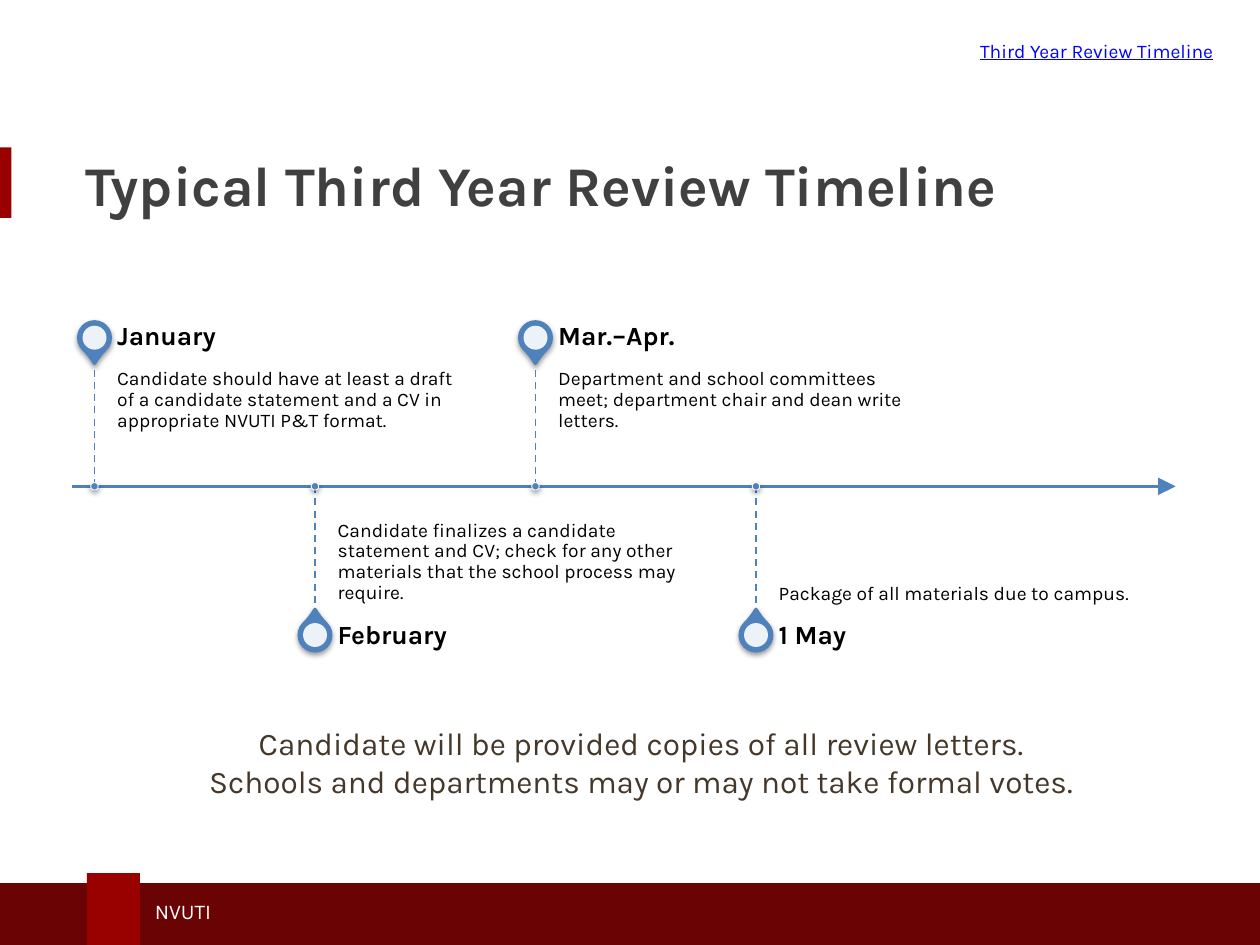
from dataclasses import dataclass

from lxml import etree
from pptx import Presentation
from pptx.dml.color import RGBColor
from pptx.enum.dml import MSO_LINE
from pptx.enum.shapes import MSO_CONNECTOR, MSO_SHAPE
from pptx.enum.text import MSO_ANCHOR, PP_ALIGN
from pptx.oxml.ns import qn
from pptx.util import Inches, Pt

RECTANGLE, ELLIPSE, TEARDROP = MSO_SHAPE.RECTANGLE, MSO_SHAPE.OVAL, MSO_SHAPE.TEAR
STRAIGHT, DASH = MSO_CONNECTOR.STRAIGHT, MSO_LINE.DASH
TOP, MIDDLE, BOTTOM = MSO_ANCHOR.TOP, MSO_ANCHOR.MIDDLE, MSO_ANCHOR.BOTTOM
LEFT, CENTER, RIGHT = PP_ALIGN.LEFT, PP_ALIGN.CENTER, PP_ALIGN.RIGHT

BLACK = RGBColor(0x00, 0x00, 0x00)
WHITE = RGBColor(0xFF, 0xFF, 0xFF)
BLUE = RGBColor(0x4F, 0x81, 0xBD)
LINK_BLUE = RGBColor(0x00, 0x00, 0xFF)
CRIMSON = RGBColor(0x99, 0x00, 0x00)
MAROON = RGBColor(0x69, 0x03, 0x04)
GRAY = RGBColor(0x40, 0x40, 0x41)
BROWN = RGBColor(0x45, 0x38, 0x2B)

FONT = "Karla"
AXIS_Y = 3.86
FIRST_X, STEP_X = 0.75, 1.75
STEM, TEXT_WIDTH, HEADING_HEIGHT = 1.01, 2.91, 0.35
PIN, PIN_HOLE, DOT = 0.25, 0.19, 0.06


@dataclass(frozen=True)
class Style:
    size: float
    color: RGBColor
    bold: bool = False
    underline: bool = False
    align: PP_ALIGN = LEFT
    anchor: MSO_ANCHOR = TOP
    insets: tuple = (0.1, 0.05, 0.1, 0.05)
    line_spacing: float = 1.0
    space_after: float = 0


@dataclass(frozen=True)
class Milestone:
    heading: str
    detail: str


HEADING = Style(15, BLACK, bold=True, anchor=MIDDLE, insets=(0, 0, 0.1, 0), line_spacing=0.9)
DETAIL_ABOVE = Style(11, BLACK, insets=(0, 0.08, 0.08, 0.11), line_spacing=0.9)
DETAIL_BELOW = Style(11, BLACK, anchor=BOTTOM, insets=(0, 0.11, 0, 0.08), line_spacing=0.9)

MILESTONES = [
    Milestone("January", "Candidate should have at least a draft of a candidate statement "
              "and a CV in appropriate NVUTI P&T format."),
    Milestone("February", "Candidate finalizes a candidate statement and CV; check for any "
              "other materials that the school process may require."),
    Milestone("Mar.–Apr.", "Department and school committees meet; department chair and "
              "dean write letters."),
    Milestone("1 May", "Package of all materials due to campus."),
]


def add_text(page, left: float, top: float, width: float, height: float,
             lines: list[str], style: Style):
    box = page.shapes.add_textbox(Inches(left), Inches(top), Inches(width), Inches(height))
    frame = box.text_frame
    frame.word_wrap = True
    frame.vertical_anchor = style.anchor
    (frame.margin_left, frame.margin_top,
     frame.margin_right, frame.margin_bottom) = map(Inches, style.insets)
    for index, line in enumerate(lines):
        para = frame.add_paragraph() if index else frame.paragraphs[0]
        para.text = line
        para.alignment = style.align
        para.line_spacing = style.line_spacing
        para.space_after = Pt(style.space_after)
        para.font.name = FONT
        para.font.size = Pt(style.size)
        para.font.bold = style.bold
        para.font.underline = style.underline
        para.font.color.rgb = style.color
    return box


def add_filled(page, kind: MSO_SHAPE, left: float, top: float, width: float,
               height: float, color: RGBColor):
    shape = page.shapes.add_shape(kind, Inches(left), Inches(top), Inches(width), Inches(height))
    shape.shadow.inherit = False
    shape.fill.solid()
    shape.fill.fore_color.rgb = color
    shape.line.fill.background()
    return shape


def add_centered(page, kind: MSO_SHAPE, x: float, y: float, size: float, color: RGBColor):
    return add_filled(page, kind, x - size / 2, y - size / 2, size, size, color)


def outline(shape, color: RGBColor, width: float) -> None:
    shape.line.color.rgb = color
    shape.line.width = Pt(width)


def set_alpha(color_element, percent: int) -> None:
    etree.SubElement(color_element, qn("a:alpha"), val=str(percent * 1000))


def add_shadow(shape) -> None:
    effects = shape._element.spPr.find(qn("a:effectLst"))
    shadow = etree.SubElement(effects, qn("a:outerShdw"), blurRad=str(Pt(3.1)),
                              dist=str(Pt(1.6)), dir="5400000", rotWithShape="0")
    set_alpha(etree.SubElement(shadow, qn("a:srgbClr"), val=str(BLACK)), 38)


def add_line(page, start: tuple, end: tuple, width: float):
    line = page.shapes.add_connector(STRAIGHT, *map(Inches, start + end))
    outline(line, BLUE, width)
    etree.SubElement(line._element.spPr, qn("a:effectLst"))
    return line


def add_milestone(page, milestone: Milestone, x: float, above: bool) -> None:
    text_left = x + 0.18
    if above:
        stem_end, detail_top, heading_top = AXIS_Y - STEM, AXIS_Y - STEM, 2.5
        pin_y, rotation, detail_style = 2.68, 135, DETAIL_ABOVE
    else:
        stem_end, detail_top, heading_top = AXIS_Y + STEM, AXIS_Y, AXIS_Y + STEM
        pin_y, rotation, detail_style = 5.04, 315, DETAIL_BELOW

    pin = add_centered(page, TEARDROP, x, pin_y, PIN, BLUE)
    pin.adjustments[0] = 1.15
    pin.rotation = rotation
    outline(pin, BLUE, 2)
    add_shadow(pin)
    hole = add_centered(page, ELLIPSE, x, pin_y, PIN_HOLE, WHITE)
    set_alpha(hole._element.spPr.find(qn("a:solidFill"))[0], 90)

    add_text(page, text_left, detail_top, TEXT_WIDTH, STEM, [milestone.detail], detail_style)
    add_text(page, text_left, heading_top, TEXT_WIDTH, HEADING_HEIGHT,
             [milestone.heading], HEADING)

    stem = add_line(page, (x, AXIS_Y), (x, stem_end), 1)
    stem.line.dash_style = DASH
    dot = add_centered(page, ELLIPSE, x, AXIS_Y, DOT, BLUE)
    outline(dot, WHITE, 0.5)
    add_shadow(dot)


def main() -> None:
    """Build the third year review timeline slide."""
    deck = Presentation()
    deck.slide_width, deck.slide_height = Inches(10), Inches(7.5)
    page = deck.slides.add_slide(deck.slide_layouts[6])

    add_filled(page, RECTANGLE, 0, 1.17, 0.09, 0.56, CRIMSON)
    add_filled(page, RECTANGLE, -0.03, 7.01, 10.09, 0.5, MAROON)
    add_filled(page, RECTANGLE, 0.69, 6.93, 0.42, 0.58, CRIMSON)
    add_text(page, 1.13, 7.08, 3.95, 0.3, ["NVUTI"], Style(12, WHITE, anchor=MIDDLE))
    add_text(page, 0.58, 1.11, 8.75, 0.7, ["Typical Third Year Review Timeline"],
             Style(32, GRAY, bold=True, anchor=MIDDLE))
    add_text(page, 5.68, 0.26, 4.05, 0.37, ["Third Year Review Timeline"],
             Style(11, LINK_BLUE, underline=True, align=RIGHT, space_after=18))

    axis = add_line(page, (0.57, AXIS_Y), (9.33, AXIS_Y), 1.5)
    etree.SubElement(axis.line._get_or_add_ln(), qn("a:tailEnd"),
                     type="triangle", w="lg", len="lg")
    for index, milestone in enumerate(MILESTONES):
        add_milestone(page, milestone, FIRST_X + index * STEP_X, above=index % 2 == 0)

    add_text(page, 1.15, 5.7, 7.88, 1.01,
             ["Candidate will be provided copies of all review letters.",
              "Schools and departments may or may not take formal votes."],
             Style(18, BROWN, align=CENTER))
    deck.save("out.pptx")


if __name__ == "__main__":
    main()
